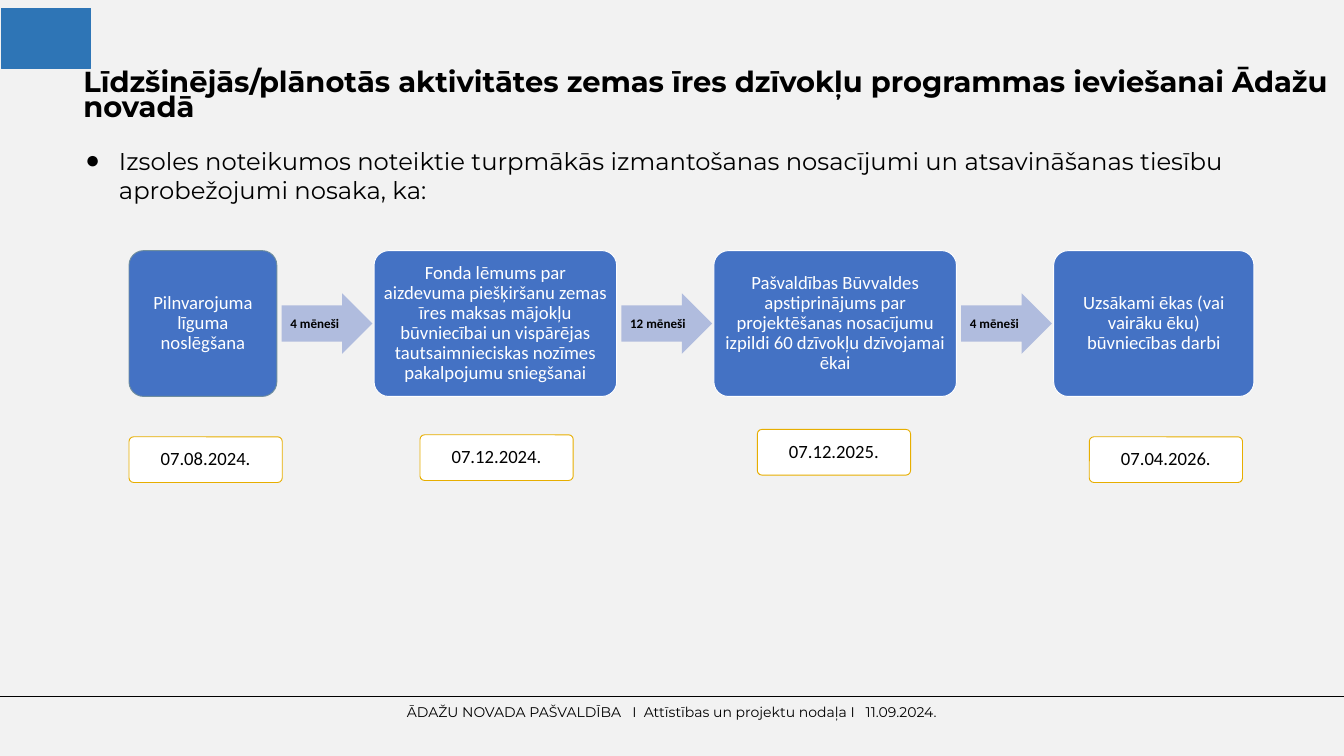
from lxml import etree
from pptx import Presentation
from pptx.dml.color import RGBColor
from pptx.enum.shapes import MSO_CONNECTOR, MSO_SHAPE
from pptx.enum.text import MSO_ANCHOR, MSO_AUTO_SIZE, PP_ALIGN
from pptx.oxml.ns import qn
from pptx.util import Inches, Pt

ROUNDED, ARROW, RECTANGLE = (
    MSO_SHAPE.ROUNDED_RECTANGLE, MSO_SHAPE.RIGHT_ARROW, MSO_SHAPE.RECTANGLE)
LEFT, CENTER = PP_ALIGN.LEFT, PP_ALIGN.CENTER
TOP, MIDDLE = MSO_ANCHOR.TOP, MSO_ANCHOR.MIDDLE

COLORS = {
    "background": "F2F2F2", "black": "000000", "white": "FFFFFF",
    "step": "4472C4", "first_outline": "6F8E9F", "arrow": "B0BCDE",
    "date_outline": "E7AE00", "corner": "2E75B6",
}

# Step text, step width, time until the next step
STEPS = [
    ("Pilnvarojuma līguma noslēgšana", 2.2, "4 mēneši"),
    ("Fonda lēmums par aizdevuma piešķiršanu zemas īres maksas mājokļu "
     "būvniecībai un vispārējas tautsaimnieciskas nozīmes pakalpojumu sniegšanai",
     3.61, "12 mēneši"),
    ("Pašvaldības Būvvaldes apstiprinājums par projektēšanas nosacījumu "
     "izpildi 60 dzīvokļu dzīvojamai ēkai", 3.61, "4 mēneši"),
    ("Uzsākami ēkas (vai vairāku ēku) būvniecības darbi", 2.98, None),
]
# Date, left, top
DATES = [
    ("07.08.2024.", 1.92, 6.5),
    ("07.12.2024.", 6.25, 6.47),
    ("07.12.2025.", 11.27, 6.39),
    ("07.04.2026.", 16.21, 6.5),
]


def color(name):
    return RGBColor.from_string(COLORS[name])


def place(shape, box):
    shape.left, shape.top, shape.width, shape.height = map(Inches, box)


def write(shape, text, size, font_name="Calibri", ink="black", bold=False,
          align=CENTER, anchor=MIDDLE, spacing=0.9, margins=(0.08,) * 4):
    """Fill a shape with one formatted paragraph and return the paragraph."""
    frame = shape.text_frame
    frame.text = text
    frame.word_wrap = True
    frame.auto_size = MSO_AUTO_SIZE.NONE
    frame.vertical_anchor = anchor
    (frame.margin_left, frame.margin_top,
     frame.margin_right, frame.margin_bottom) = map(Inches, margins)
    paragraph = frame.paragraphs[0]
    paragraph.alignment = align
    paragraph.line_spacing = spacing
    font = paragraph.font
    font.name, font.size, font.bold = font_name, Pt(size), bold
    font.color.rgb = color(ink)
    return paragraph


def add_block(slide, preset, box, fill, outline=None, adjustments=()):
    block = slide.shapes.add_shape(preset, *map(Inches, box))
    block.shadow.inherit = False
    block.fill.solid()
    block.fill.fore_color.rgb = color(fill)
    if outline:
        block.line.color.rgb = color(outline)
        block.line.width = Pt(1)
    else:
        block.line.fill.background()
    for index, value in enumerate(adjustments):
        block.adjustments[index] = value
    return block


def add_heading(slide, box):
    title = slide.shapes.title
    place(title, box)
    write(title, "Līdzšinējās/plānotās aktivitātes zemas īres dzīvokļu "
          "programmas ieviešanai Ādažu novadā", 31, "Montserrat", bold=True,
          align=LEFT, anchor=TOP, spacing=0.7, margins=(0.1, 0.05, 0.1, 0.05))


def add_introduction(slide, box):
    introduction = slide.placeholders[1]
    place(introduction, box)
    paragraph = write(
        introduction, "Izsoles noteikumos noteiktie turpmākās izmantošanas "
        "nosacījumi un atsavināšanas tiesību aprobežojumi nosaka, ka:",
        26, "Montserrat", align=LEFT, anchor=TOP, spacing=1.0,
        margins=(0.1, 0.05, 0.1, 0.05))
    paragraph.space_before = Pt(6)
    properties = paragraph._p.get_or_add_pPr()
    properties.set("marL", str(Inches(0.5)))
    properties.set("indent", str(Inches(-0.5)))
    bullet = etree.Element(qn("a:buChar"), char="●")
    properties.find(qn("a:defRPr")).addprevious(bullet)


def add_process(slide, box):
    """Steps from left to right, with an arrow in each gap."""
    left, top, width, height = box
    gap = (width - sum(step[1] for step in STEPS)) / (len(STEPS) - 1)
    arrow_width, arrow_height = 1.35, 0.9
    for number, (text, step_width, duration) in enumerate(STEPS):
        outline = "white" if number else "first_outline"
        step = add_block(slide, ROUNDED, (left, top, step_width, height),
                         "step", outline, (0.1,))
        write(step, text, 20, ink="white")
        left += step_width
        if duration:
            arrow_box = (left + 0.07, top + (height - arrow_height) / 2,
                         arrow_width, arrow_height)
            arrow = add_block(slide, ARROW, arrow_box, "arrow",
                              adjustments=(0.6, 0.5))
            write(arrow, duration, 14, bold=True, align=LEFT, spacing=1.0,
                  margins=(0.13, 0, 0, 0))
        left += gap


def add_date(slide, text, box):
    date = add_block(slide, ROUNDED, box, "white", "date_outline", (0.1,))
    write(date, text, 20)


def add_footer(slide, box):
    left, top, width, height = box
    rule = slide.shapes.add_connector(
        MSO_CONNECTOR.STRAIGHT, Inches(left), Inches(top),
        Inches(left + width), Inches(top))
    rule.line.color.rgb = color("black")
    rule.line.width = Pt(0.75)
    etree.SubElement(rule._element.spPr, qn("a:effectLst"))
    footer = slide.shapes.add_textbox(
        Inches(left + 0.1), Inches(top + 0.1),
        Inches(width - 0.2), Inches(height - 0.1))
    write(footer, "ĀDAŽU NOVADA PAŠVALDĪBA   I  Attīstības un projektu nodaļa I"
          "   11.09.2024.", 15, "Montserrat", anchor=TOP, spacing=Pt(18),
          margins=(0,) * 4)


def main():
    presentation = Presentation()
    presentation.slide_width = Inches(20)
    presentation.slide_height = Inches(11.25)
    slide = presentation.slides.add_slide(presentation.slide_layouts[1])
    slide.background.fill.solid()
    slide.background.fill.fore_color.rgb = color("background")

    add_footer(slide, (0, 10.37, 20, 0.35))
    add_introduction(slide, (1.17, 2.12, 18, 0.98))
    add_heading(slide, (1.14, 1.04, 18.75, 0.84))
    add_process(slide, (1.92, 3.73, 16.74, 2.17))
    for text, left, top in DATES:
        add_date(slide, text, (left, top, 2.28, 0.68))
    add_block(slide, RECTANGLE, (0.02, 0.12, 1.33, 0.9), "corner", "corner")

    presentation.save("out.pptx")


if __name__ == "__main__":
    main()
